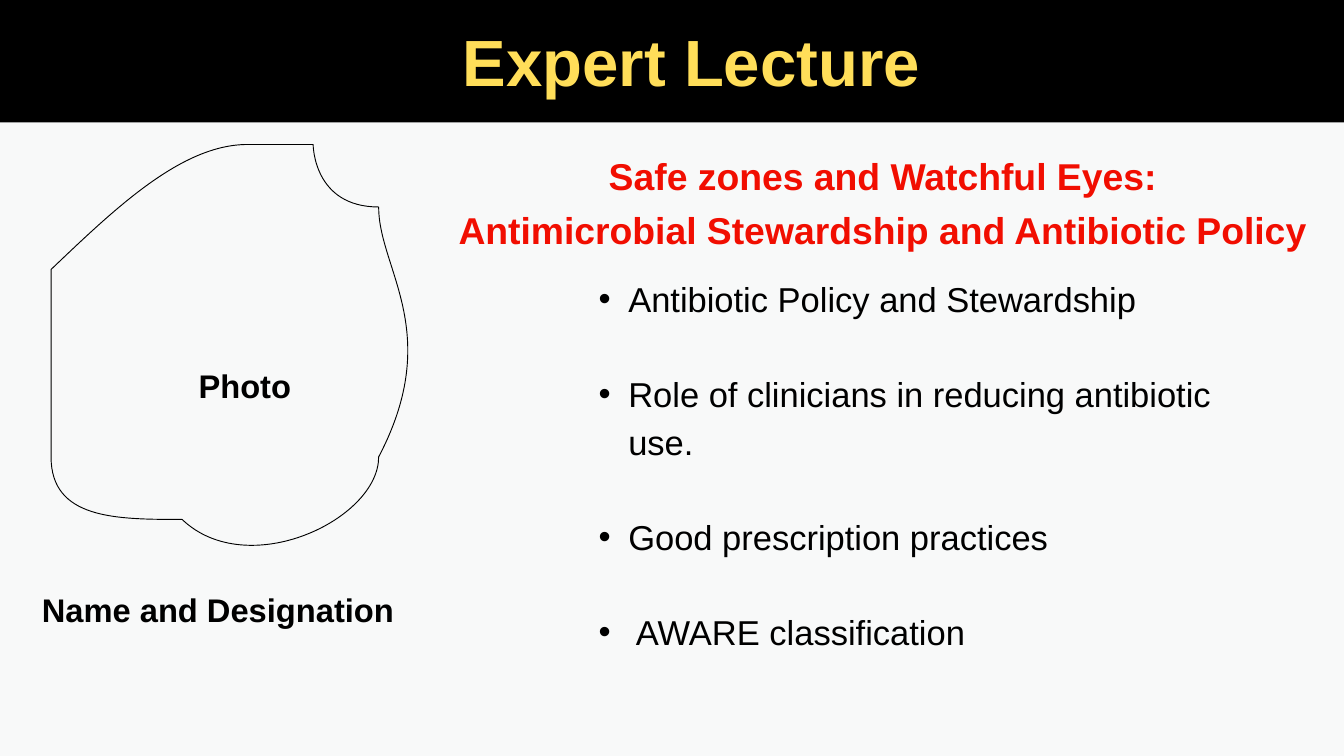
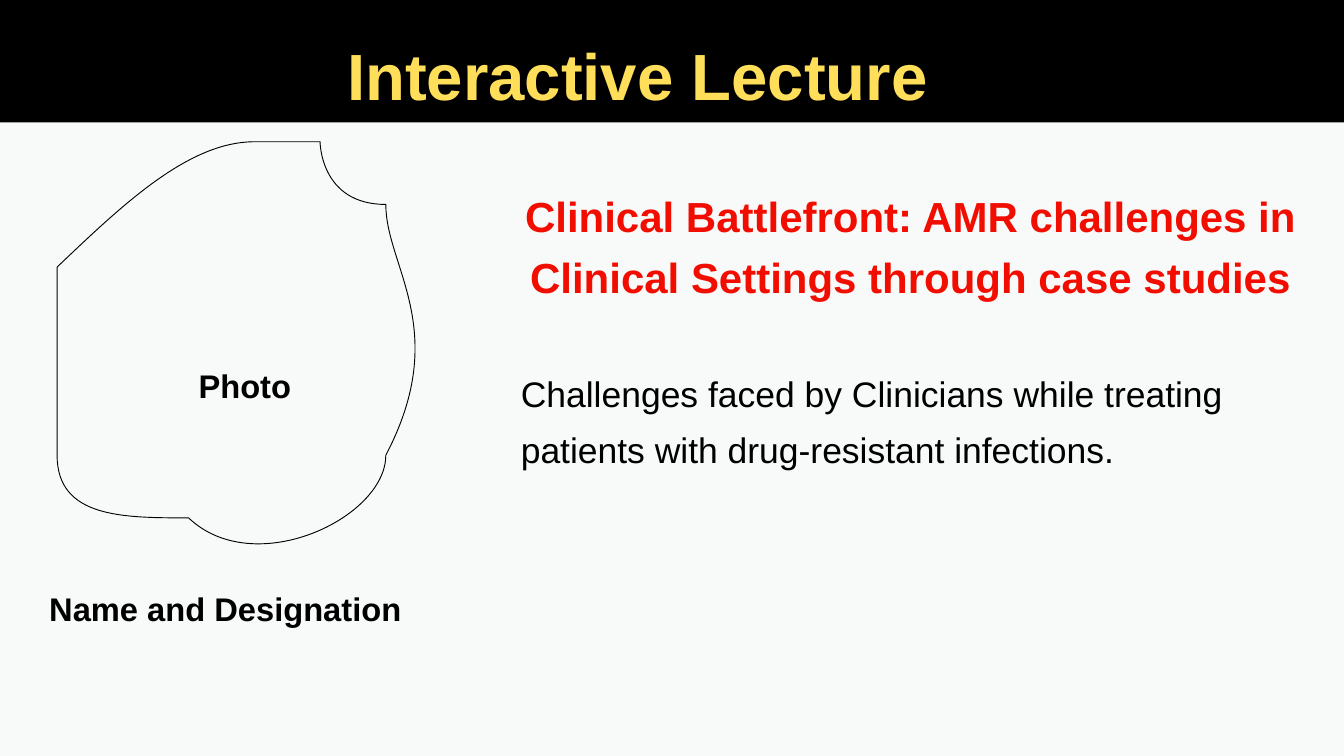
from dataclasses import dataclass

from lxml import etree
from pptx import Presentation
from pptx.dml.color import RGBColor
from pptx.enum import shapes, text
from pptx.oxml import ns
from pptx.util import Inches, Pt


@dataclass(frozen=True)
class Theme:
    font: str = "Arial"
    paper: str = "F8F9F9"
    ink: str = "000000"
    gold: str = "FFDE59"
    red: str = "F10E01"
    title_size: int = 70
    label_size: int = 35
    bullet_size: int = 37
    body_size: int = 38


# Start point, then cubic curves of two handles and an end point, in inches
PHOTO_START = (5.6, 2.93)
PHOTO_CURVES = [
    [(5.37, 2.66), (5.09, 2.41), (4.75, 2.28)],
    [(4.51, 2.18), (4.25, 2.15), (3.99, 2.15)],
    [(2.89, 2.17), (1.9, 2.93), (1.44, 3.9)],
    [(1.04, 4.76), (0.76, 6.24), (1.12, 7.11)],
    [(1.48, 7.98), (2.08, 8.45), (2.99, 8.49)],
    [(4.44, 8.66), (5.53, 7.66), (6.07, 6.51)],
    [(6.62, 5.36), (6.42, 3.91), PHOTO_START],
]


def curve_path(outline):
    """Turn every three straight segments of a freeform into one cubic curve."""
    path_xml = outline._element.find(".//" + ns.qn("a:path"))
    segments = path_xml.findall(ns.qn("a:lnTo"))
    for first in range(0, len(segments), 3):
        curve = etree.Element(ns.qn("a:cubicBezTo"))
        segments[first].addprevious(curve)
        for segment in segments[first:first + 3]:
            curve.append(segment[0])
            path_xml.remove(segment)


class LectureDeck:
    def __init__(self, theme):
        self.theme = theme
        self.deck = Presentation()
        self.deck.slide_width, self.deck.slide_height = Inches(20), Inches(11.25)
        self.page = None

    def add_page(self):
        self.page = self.deck.slides.add_slide(self.deck.slide_layouts[6])
        fill = self.page.background.fill
        fill.solid()
        fill.fore_color.rgb = RGBColor.from_string(self.theme.paper)
        self.band()

    def band(self):
        band = self.page.shapes.add_shape(
            shapes.MSO_SHAPE.RECTANGLE, *map(Inches, (-0.41, -0.03, 21.4, 1.85)))
        band.shadow.inherit = False
        band.fill.solid()
        band.fill.fore_color.rgb = RGBColor.from_string(self.theme.ink)
        band.line.fill.background()

    def photo_frame(self, place):
        builder = self.page.shapes.build_freeform(*PHOTO_START, scale=Inches(1))
        for curve in PHOTO_CURVES:
            builder.add_line_segments(curve, close=False)
        builder.add_line_segments([], close=True)
        frame = builder.convert_to_shape()
        curve_path(frame)
        for name, length in zip(("left", "top", "width", "height"), place):
            setattr(frame, name, Inches(length))
        frame.shadow.inherit = False
        frame.fill.background()
        frame.line.color.rgb = RGBColor.from_string(self.theme.ink)
        frame.line.width = Pt(1)

    def text(self, place, lines, size, color, bold=True, centred=True, **spacing):
        box = self.page.shapes.add_textbox(*map(Inches, place))
        frame = box.text_frame
        frame_format = dict.fromkeys(
            ("margin_left", "margin_top", "margin_right", "margin_bottom"), 0)
        frame_format |= {"word_wrap": True,
                         "auto_size": text.MSO_AUTO_SIZE.SHAPE_TO_FIT_TEXT}
        for name, value in frame_format.items():
            setattr(frame, name, value)
        align = text.PP_ALIGN.CENTER if centred else text.PP_ALIGN.LEFT
        font_format = {"name": self.theme.font, "size": Pt(size), "bold": bold}
        for index, line in enumerate(lines):
            para = frame.add_paragraph() if index else frame.paragraphs[0]
            for name, value in ({"alignment": align} | spacing).items():
                setattr(para, name, value)
            span = para.add_run()
            span.text = line
            for name, value in font_format.items():
                setattr(span.font, name, value)
            span.font.color.rgb = RGBColor.from_string(color)
        return box

    def title(self, place, words):
        self.text(place, [words], self.theme.title_size, self.theme.gold)

    def topic(self, place, lines, size):
        self.text(place, lines, size, self.theme.red, line_spacing=1.2)

    def label(self, place, words):
        self.text(place, [words], self.theme.label_size, self.theme.ink,
                  line_spacing=1.2)

    def body(self, place, words):
        self.text(place, [words], self.theme.body_size, self.theme.ink,
                  bold=False, centred=False, line_spacing=1.3)

    def bullets(self, place, items):
        box = self.text(place, items, self.theme.bullet_size, self.theme.ink,
                        bold=False, centred=False, level=1,
                        line_spacing=1.15, space_after=Pt(51))
        for para in box.text_frame.paragraphs:
            props = para._p.get_or_add_pPr()
            props.set("marL", str(Inches(0.9)))
            props.set("indent", str(Inches(-0.44)))
            etree.SubElement(props, ns.qn("a:buFont"), typeface=self.theme.font)
            etree.SubElement(props, ns.qn("a:buChar"), char="•")

    def speaker(self, frame_place, name_place):
        """Photo outline with its caption and the speaker's name line."""
        self.photo_frame(frame_place)
        self.label((-1.24, 5.33, 9.77, 0.59), "Photo")
        self.label(name_place, "Name and Designation")


def main():
    lecture = LectureDeck(Theme())

    lecture.add_page()
    lecture.speaker((0.76, 2.15, 5.85, 6.51), (-1.5, 8.66, 9.49, 0.59))
    lecture.title((6.04, 0.31, 8.5, 1.18), "Expert Lecture")
    lecture.topic((6.27, 2.15, 13.73, 1.48),
                  ["Safe zones and Watchful Eyes:",
                   "Antimicrobial Stewardship and Antibiotic Policy"], 40)
    lecture.bullets((8.45, 4.04, 10.19, 6.19),
                    ["Antibiotic Policy and Stewardship",
                     "Role of clinicians in reducing antibiotic use.",
                     "Good prescription practices",
                     " AWARE classification"])

    lecture.add_page()
    lecture.speaker((0.85, 2.11, 5.87, 6.53), (-1.53, 8.64, 9.77, 0.59))
    lecture.title((5.14, 0.52, 8.69, 1.03), "Interactive Lecture")
    lecture.topic((7.72, 2.69, 11.66, 1.67),
                  ["Clinical Battlefront: AMR challenges in Clinical Settings "
                   "through case studies"], 45)
    lecture.body((7.75, 5.35, 11.66, 2.3),
                 "Challenges faced by Clinicians while treating patients with "
                 "drug-resistant infections.")

    lecture.deck.save("out.pptx")


if __name__ == "__main__":
    main()
